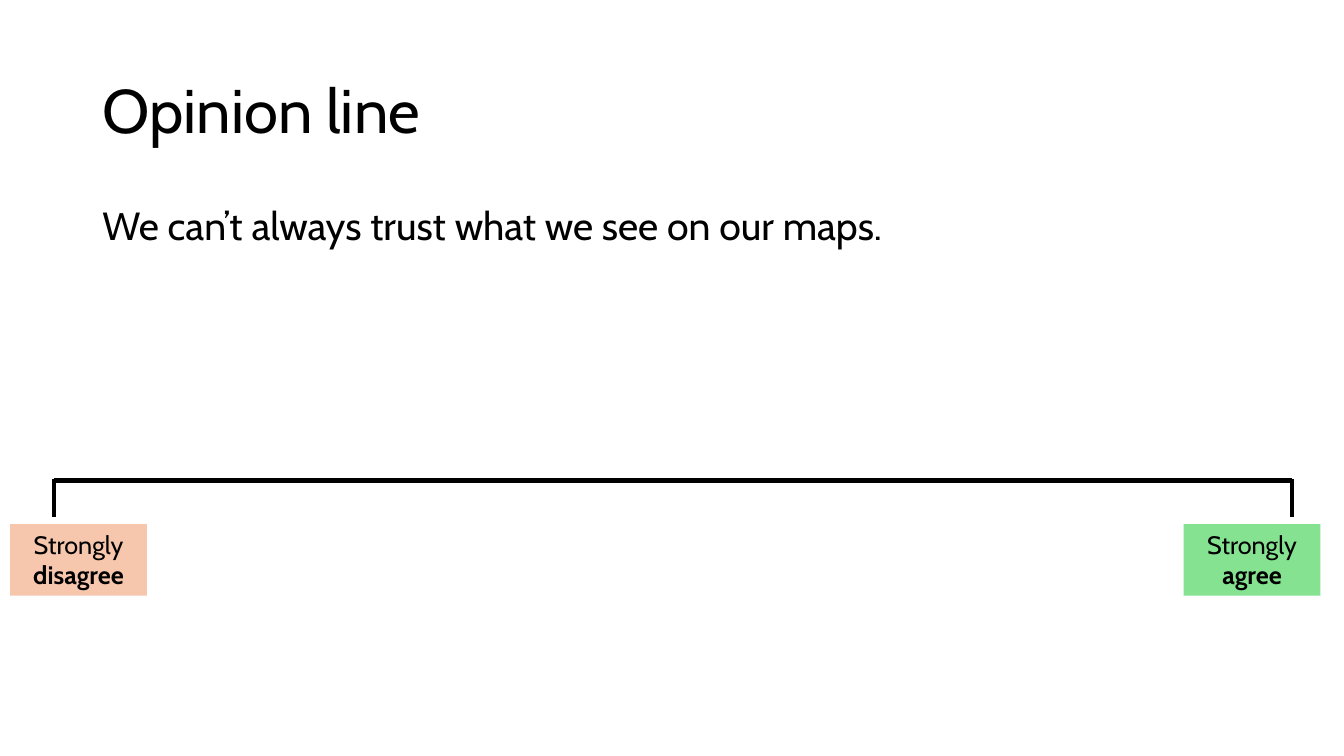
from dataclasses import dataclass

from lxml import etree
from pptx import Presentation
from pptx.dml.color import RGBColor
from pptx.enum.shapes import MSO_CONNECTOR, MSO_SHAPE
from pptx.enum.text import MSO_ANCHOR, MSO_AUTO_SIZE, PP_ALIGN
from pptx.oxml.ns import qn
from pptx.util import Inches, Pt

LEFT, CENTER = PP_ALIGN.LEFT, PP_ALIGN.CENTER
TOP, MIDDLE = MSO_ANCHOR.TOP, MSO_ANCHOR.MIDDLE
NO_AUTOFIT, GROW = MSO_AUTO_SIZE.NONE, MSO_AUTO_SIZE.SHAPE_TO_FIT_TEXT
STRAIGHT, RECTANGLE = MSO_CONNECTOR.STRAIGHT, MSO_SHAPE.RECTANGLE
TITLE_ONLY = 5
COLUMNS, ROWS = 160, 90


@dataclass(frozen=True)
class Theme:
    font: str = "Cabin"
    ink: str = "000000"
    disagree: str = "F6C6AD"
    agree: str = "84E291"
    title_size: int = 44
    statement_size: int = 28
    label_size: int = 18
    line_width: int = 3


class SlideBuilder:
    """Places elements on a grid of COLUMNS by ROWS in one theme."""

    def __init__(self, presentation, theme):
        self.theme = theme
        self.slide = presentation.slides.add_slide(presentation.slide_layouts[TITLE_ONLY])
        self.column = presentation.slide_width / COLUMNS
        self.row = presentation.slide_height / ROWS

    def grid(self, *lengths):
        """Turn alternating columns and rows into slide lengths."""
        units = (self.column, self.row) * 2
        return [round(length * unit) for length, unit in zip(lengths, units)]

    def fill_text(self, shape, runs, size, frame_format, paragraph_format):
        """Fill a shape with one paragraph of (text, bold) runs."""
        frame = shape.text_frame
        for name, value in frame_format.items():
            setattr(frame, name, value)
        paragraph = frame.paragraphs[0]
        for name, value in paragraph_format.items():
            setattr(paragraph, name, value)
        for text, bold in runs:
            run = paragraph.add_run()
            run.text = text
            font_format = {"name": self.theme.font, "size": Pt(size), "bold": bold}
            for name, value in font_format.items():
                setattr(run.font, name, value)
            run.font.color.rgb = RGBColor.from_string(self.theme.ink)

    def title(self, text, box):
        shape = self.slide.shapes.title
        shape.left, shape.top, shape.width, shape.height = self.grid(*box)
        self.fill_text(shape, [(text, False)], self.theme.title_size,
                       {"word_wrap": True, "auto_size": NO_AUTOFIT, "vertical_anchor": MIDDLE},
                       {"alignment": LEFT, "line_spacing": 0.9})

    def statement(self, text, box):
        shape = self.slide.shapes.add_textbox(*self.grid(*box))
        self.fill_text(shape, [(text, False)], self.theme.statement_size,
                       {"word_wrap": True, "auto_size": NO_AUTOFIT, "vertical_anchor": TOP},
                       {"alignment": LEFT, "line_spacing": 0.9, "space_before": Pt(10)})

    def line(self, start, end):
        connector = self.slide.shapes.add_connector(STRAIGHT, *self.grid(*start, *end))
        connector.line.color.rgb = RGBColor.from_string(self.theme.ink)
        connector.line.width = Pt(self.theme.line_width)
        etree.SubElement(connector.element.spPr, qn("a:effectLst"))

    def label(self, runs, box, color):
        shape = self.slide.shapes.add_shape(RECTANGLE, *self.grid(*box))
        shape.shadow.inherit = False
        shape.fill.solid()
        shape.fill.fore_color.rgb = RGBColor.from_string(color)
        shape.line.fill.background()
        self.fill_text(shape, runs, self.theme.label_size,
                       {"word_wrap": True, "auto_size": GROW, "vertical_anchor": TOP},
                       {"alignment": CENTER})


def main():
    presentation = Presentation()
    presentation.slide_width, presentation.slide_height = Inches(13.33), Inches(7.5)
    theme = Theme()
    builder = SlideBuilder(presentation, theme)

    margin, text_width = 11, 138
    builder.title("Opinion line", (margin, 4.8, text_width, 17.4))
    builder.statement("We can’t always trust what we see on our maps.",
                      (margin, 24, text_width, 57.1))

    line_left, line_right, line_row = 6.4, 153.8, 57.2
    tick_top, tick_bottom = 57, 61.5
    builder.line((line_left, line_row), (line_right, line_row))
    ends = [
        (line_left, 1.2, "disagree", theme.disagree),
        (line_right, 140.9, "agree", theme.agree),
    ]
    for tick, _, _, _ in ends:
        builder.line((tick, tick_bottom), (tick, tick_top))
    for _, label_left, opinion, color in ends:
        builder.label([("Strongly ", False), (opinion, True)],
                      (label_left, 62.4, 16.3, 8.5), color)

    presentation.save("out.pptx")


if __name__ == "__main__":
    main()
